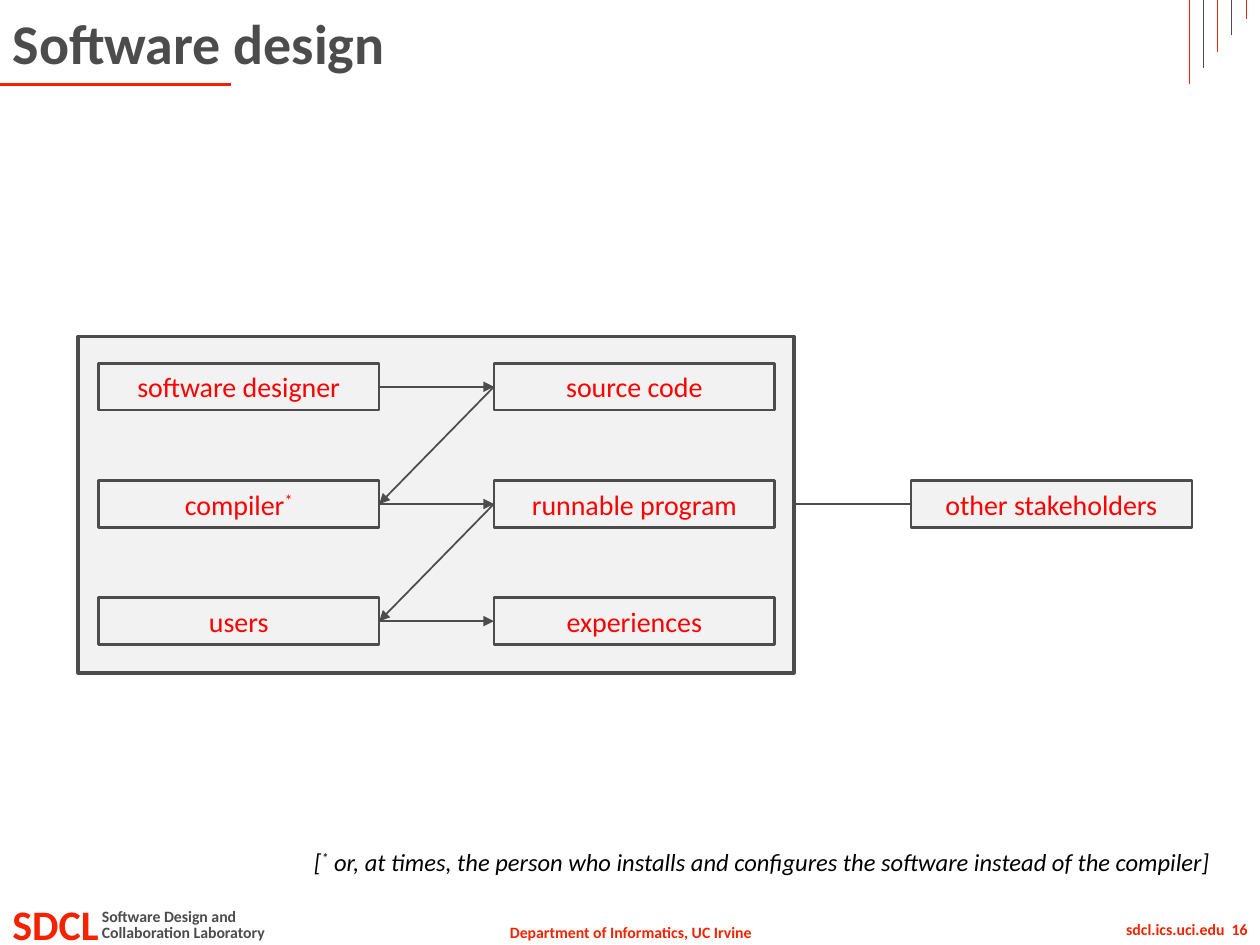
from lxml.etree import SubElement
from pptx import Presentation
from pptx.dml.color import RGBColor
from pptx.enum.shapes import MSO_CONNECTOR, MSO_SHAPE
from pptx.enum.text import MSO_ANCHOR, MSO_AUTO_SIZE, PP_ALIGN
from pptx.oxml.ns import qn
from pptx.util import Inches, Pt

HUES = {"red": "F32200", "gray": "4C4C4C", "pale": "F2F2F2",
        "label": "FF0000", "black": "000000"}
FONT = "Calibri"
WIDE, HIGH = 2.23, 0.37
LEFT, RIGHT, FAR = 0.78, 3.92, 7.23
MID, STEP = 4, 0.93
ROWS = [("software designer", "source code"),
        ("compiler", "runnable program"),
        ("users", "experiences")]


def hue(name):
    """Return the named colour."""
    return RGBColor.from_string(HUES[name])


def add_run(para, text, size, color, bold=False, italic=False, raised=False):
    """Add one formatted run to a paragraph."""
    run = para.add_run()
    run.text = text
    font = run.font
    font.name, font.size = FONT, Pt(size)
    font.bold, font.italic = bold, italic
    font.color.rgb = hue(color)
    if raised:
        run._r.get_or_add_rPr().set("baseline", "30000")


def add_text(slide, area, align=PP_ALIGN.LEFT, wrap=False):
    """Add a text box and return its paragraph."""
    frame = slide.shapes.add_textbox(*map(Inches, area)).text_frame
    frame.word_wrap = wrap
    frame.auto_size = MSO_AUTO_SIZE.SHAPE_TO_FIT_TEXT
    para = frame.paragraphs[0]
    para.alignment = align
    return para


def add_box(slide, area, width):
    """Add a pale outlined box and return its text frame."""
    box = slide.shapes.add_shape(MSO_SHAPE.RECTANGLE, *map(Inches, area))
    box.shadow.inherit = False
    box.fill.solid()
    box.fill.fore_color.rgb = hue("pale")
    box.line.color.rgb = hue("gray")
    box.line.width = Pt(width)
    return box.text_frame


def add_node(slide, left, mid, text, mark=""):
    """Add a labelled box centred on a height."""
    frame = add_box(slide, (left, mid - HIGH / 2, WIDE, HIGH), 1.5)
    frame.word_wrap = True
    frame.vertical_anchor = MSO_ANCHOR.MIDDLE
    para = frame.paragraphs[0]
    para.alignment = PP_ALIGN.CENTER
    add_run(para, text, 16, "label")
    if mark:
        add_run(para, mark, 16, "label", raised=True)


def add_line(slide, start, end, color="gray", width=1, arrow=False):
    """Add a straight line, with an arrowhead at its end if asked."""
    line = slide.shapes.add_connector(
        MSO_CONNECTOR.STRAIGHT, *map(Inches, (*start, *end)))
    line.line.color.rgb = hue(color)
    line.line.width = Pt(width)
    if arrow:
        SubElement(line.line._get_or_add_ln(), qn("a:tailEnd"), type="triangle")
    SubElement(line._element.spPr, qn("a:effectLst"))


def add_title(slide, text):
    """Place and fill the title."""
    title = slide.shapes.title
    title.left, title.top, title.width, title.height = map(
        Inches, (0, 0, 9, 0.67))
    frame = title.text_frame
    frame.auto_size = MSO_AUTO_SIZE.NONE
    frame.vertical_anchor = MSO_ANCHOR.MIDDLE
    para = frame.paragraphs[0]
    para.alignment = PP_ALIGN.LEFT
    add_run(para, text, 32, "gray", bold=True)


def add_frame(slide):
    """Add the footer texts and the corner lines."""
    foot = [
        ("Department of Informatics, UC Irvine", (3.93, 7.27, 2.15, 0.25),
         9, "red", PP_ALIGN.CENTER, False),
        ("SDCL", (0, 7.08, 1, 0.5), 24, "red", PP_ALIGN.LEFT, True),
        ("Collaboration Laboratory", (0.71, 7.27, 1.53, 0.25),
         9, "gray", PP_ALIGN.LEFT, False),
        ("Software Design and", (0.71, 7.15, 1.29, 0.25),
         9, "gray", PP_ALIGN.LEFT, False),
        ("sdcl.ics.uci.edu  16", (7.84, 7.25, 2.16, 0.25),
         9, "red", PP_ALIGN.RIGHT, True),
    ]
    for text, area, size, color, align, wrap in foot:
        add_run(add_text(slide, area, align, wrap), text, size, color, bold=True)
    add_line(slide, (0, 0.67), (1.83, 0.67), "red", 1.5)
    for i, color in enumerate(("red", "gray", "red", "gray", "red")):
        x = 9.44 + 0.1125 * i
        add_line(slide, (x, 0.67 - 0.13 * i), (x, 0), color, 0.5)


def add_chain(slide):
    """Add the chain of makers and products, and the outsiders."""
    add_box(slide, (0.62, 2.67, 5.68, 2.67), 2)
    mids = [MID + STEP * (i - 1) for i in range(len(ROWS))]
    for high, low in zip(mids, mids[1:]):
        add_line(slide, (RIGHT, high), (LEFT + WIDE, low), arrow=True)
    for mid, (maker, made) in zip(mids, ROWS):
        add_node(slide, LEFT, mid, maker, "*" if maker == "compiler" else "")
        add_node(slide, RIGHT, mid, made)
        add_line(slide, (LEFT + WIDE, mid), (RIGHT, mid), arrow=True)
    add_node(slide, FAR, MID, "other stakeholders")
    add_line(slide, (6.3, MID), (FAR, MID))


def add_note(slide):
    """Add the footnote on the compiler."""
    para = add_text(slide, (2.38, 6.67, 7.34, 0.34), PP_ALIGN.CENTER)
    add_run(para, "[", 14, "black", italic=True)
    add_run(para, "*", 14, "black", italic=True, raised=True)
    add_run(para, " or, at times, the person who installs and configures "
            "the software instead of the compiler]", 14, "black", italic=True)


def main():
    """Build and save the slide."""
    deck = Presentation()
    deck.slide_width, deck.slide_height = Inches(10), Inches(7.5)
    slide = deck.slides.add_slide(deck.slide_layouts[5])
    add_frame(slide)
    add_title(slide, "Software design")
    add_chain(slide)
    add_note(slide)
    deck.save("out.pptx")


if __name__ == "__main__":
    main()
